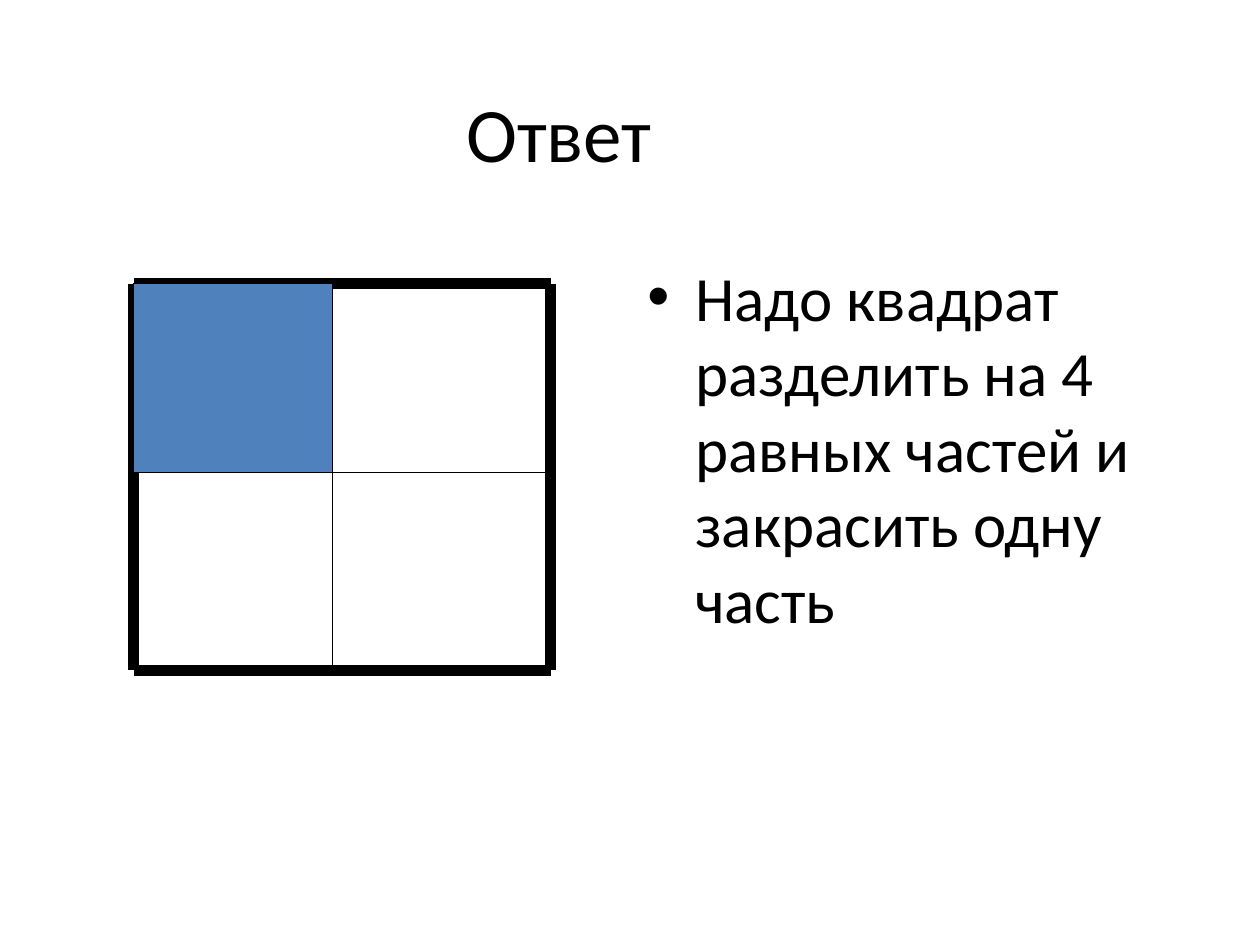
from lxml import etree
from pptx import Presentation
from pptx import util as u
from pptx.dml.color import RGBColor
from pptx.enum import shapes, text
from pptx.oxml.ns import qn

BLACK = RGBColor(0, 0, 0)
WHITE = RGBColor(255, 255, 255)
BLUE = RGBColor(0x4F, 0x81, 0xBD)

TITLE = "Ответ "
TASK = "Надо квадрат разделить на 4 равных частей и закрасить одну часть"
COLS = (1.06, 2.64, 4.37)
ROWS = (2.25, 3.75, 5.32)
THICK, THIN = 6, 0.75

deck = Presentation()
deck.slide_width, deck.slide_height = u.Inches(10), u.Inches(7.5)
slide = deck.slides.add_slide(deck.slide_layouts[5])


def place(shape, *box):
    shape.left, shape.top, shape.width, shape.height = map(u.Inches, box)


def write(shape, words, size, align, anchor, bullet=None, indent=0.38):
    frame = shape.text_frame
    frame.word_wrap = True
    frame.auto_size = text.MSO_AUTO_SIZE.NONE
    frame.vertical_anchor = anchor
    para = frame.paragraphs[0]
    para.text = words
    para.alignment = align
    if bullet:
        props = para._p.get_or_add_pPr()
        props.set("marL", str(u.Inches(indent)))
        props.set("indent", str(-u.Inches(indent)))
        etree.SubElement(props, qn("a:buFont")).set("typeface", "Arial")
        etree.SubElement(props, qn("a:buChar")).set("char", bullet)
    font = para.runs[0].font
    font.name, font.size = "Calibri", u.Pt(size)
    font.color.rgb = BLACK


def rule(x1, y1, x2, y2, width):
    line = slide.shapes.add_connector(
        shapes.MSO_CONNECTOR.STRAIGHT, *map(u.Inches, (x1, y1, x2, y2)))
    line.line.color.rgb = BLACK
    line.line.width = u.Pt(width)
    etree.SubElement(line._element.spPr, qn("a:effectLst"))


title = slide.shapes.title
place(title, 0.75, 0.17, 7.51, 1.75)
write(title, TITLE, 44, text.PP_ALIGN.CENTER, text.MSO_ANCHOR.MIDDLE)

body = slide.shapes.add_textbox(0, 0, 0, 0)
place(body, 5.04, 2, 4.12, 4)
body.fill.solid()
body.fill.fore_color.rgb = WHITE
tint = body._element.spPr.find(".//" + qn("a:srgbClr"))
etree.SubElement(tint, qn("a:alpha")).set("val", "65000")
write(body, TASK, 36, text.PP_ALIGN.LEFT, text.MSO_ANCHOR.TOP, bullet="•")

left, mid, right = COLS
top, half, base = ROWS
for y in (top, base):
    rule(left, y, right, y, THICK)
for x in (left, right):
    rule(x, top, x, base, THICK)
rule(mid, base, mid, top, THIN)
rule(left, half, right, half, THIN)

part = slide.shapes.add_shape(shapes.MSO_SHAPE.RECTANGLE, 0, 0, 0, 0)
place(part, left, top, mid - left, half - top)
part.shadow.inherit = False
part.fill.solid()
part.fill.fore_color.rgb = BLUE
part.line.color.rgb = BLACK
part.line.width = u.Pt(THIN)

deck.save("out.pptx")
